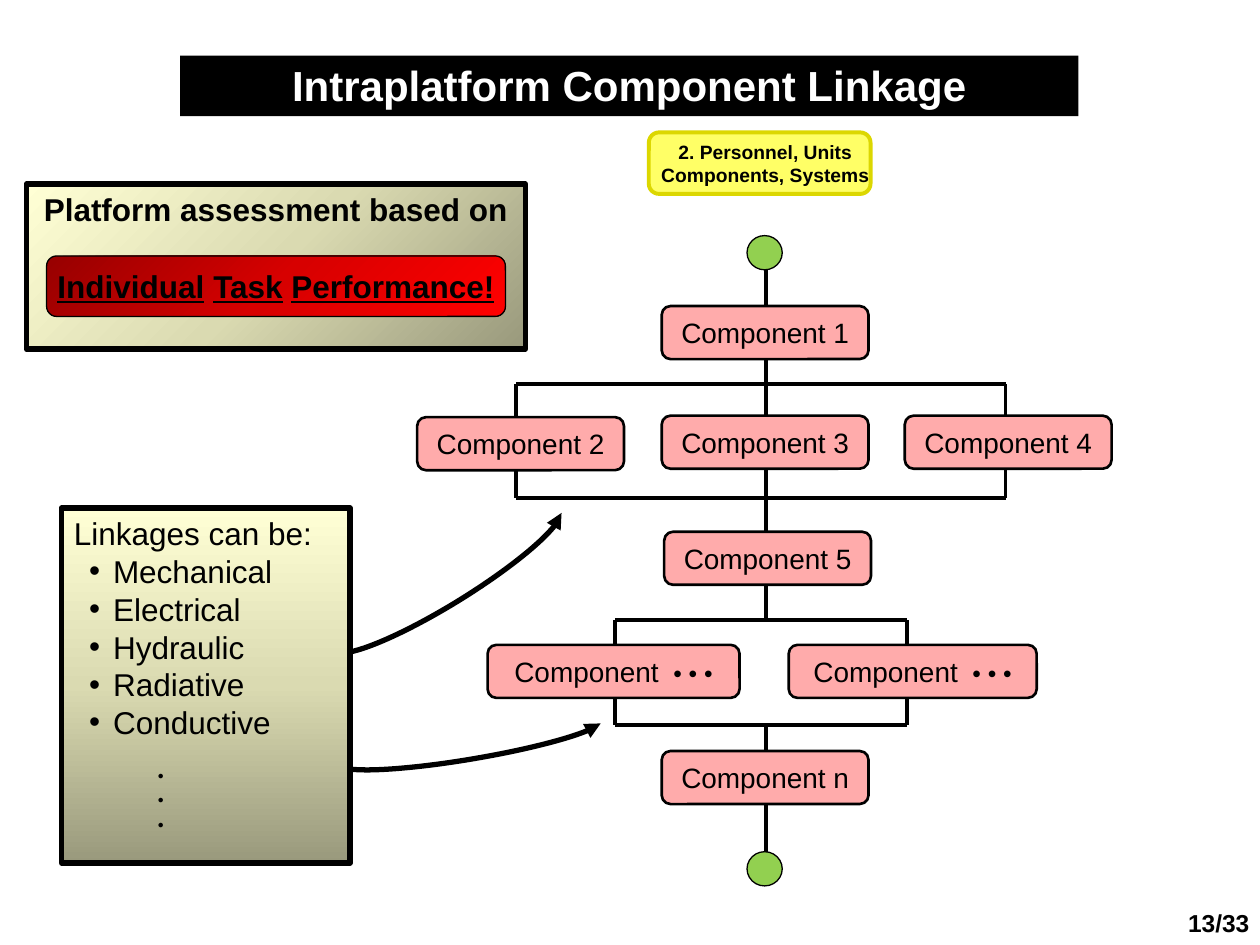
from copy import deepcopy

from lxml.etree import SubElement
from pptx import Presentation
from pptx.dml.color import RGBColor
from pptx.enum.shapes import MSO_CONNECTOR, MSO_SHAPE
from pptx.enum.text import MSO_ANCHOR, PP_ALIGN
from pptx.oxml.ns import qn
from pptx.util import Cm, Pt

KHAKI = ("99997C", "DADAB1", "FFFFD5")
RED = ("970000", "D70000", "FF0000")
PINK = "FFABAB"
GREEN = "92D050"


def color(value):
    return RGBColor.from_string(value)


class SlideBuilder:
    font = "Arial"
    ink = "000000"

    def __init__(self, presentation):
        self.slide = presentation.slides.add_slide(presentation.slide_layouts[5])

    def format_run(self, run, size, bold=False, ink=None):
        run.font.name = self.font
        run.font.size = Pt(size)
        run.font.bold = bold
        run.font.color.rgb = color(ink or self.ink)

    def title(self, text, left, top, width, height):
        shape = self.slide.shapes.title
        shape.left, shape.top, shape.width, shape.height = map(Cm, (left, top, width, height))
        shape.fill.solid()
        shape.fill.fore_color.rgb = color(self.ink)
        frame = shape.text_frame
        frame.text = text
        frame.margin_top = Cm(0.25)
        frame.vertical_anchor = MSO_ANCHOR.MIDDLE
        paragraph = frame.paragraphs[0]
        paragraph.alignment = PP_ALIGN.CENTER
        paragraph.line_spacing = 0.85
        self.format_run(paragraph.runs[0], 24, True, "FFFFFF")

    def shape(self, kind, left, top, width, height, fill=None, line="000000", weight=1.5):
        shape = self.slide.shapes.add_shape(kind, *map(Cm, (left, top, width, height)))
        shape.shadow.inherit = False
        shape.line.color.rgb = color(line)
        shape.line.width = Pt(weight)
        if fill:
            shape.fill.solid()
            shape.fill.fore_color.rgb = color(fill)
        else:
            shape.fill.background()
        return shape

    def gradient(self, shape, colors, angle):
        shape.fill.gradient()
        shape.fill.gradient_angle = angle
        stop_list = shape._element.spPr.find(qn("a:gradFill")).find(qn("a:gsLst"))
        stop_list.append(deepcopy(stop_list[0]))
        for index, stop in enumerate(shape.fill.gradient_stops):
            stop.position = index / 2
            stop.color.rgb = color(colors[index])

    def set_text(self, shape, text, size, bold=False, align=PP_ALIGN.CENTER,
                 anchor=MSO_ANCHOR.TOP, wrap=True):
        frame = shape.text_frame
        frame.word_wrap = wrap
        frame.vertical_anchor = anchor
        frame.text = text
        for paragraph in frame.paragraphs:
            paragraph.alignment = align
            for run in paragraph.runs:
                self.format_run(run, size, bold)
        return frame

    def label(self, shape, text, size, bold=False):
        frame = self.set_text(shape, text, size, bold, anchor=MSO_ANCHOR.MIDDLE, wrap=False)
        frame.margin_left = frame.margin_right = 0
        return frame

    def add_run(self, paragraph, text, size, bold=False, underline=False):
        run = paragraph.add_run()
        run.text = text
        self.format_run(run, size, bold)
        run.font.underline = underline

    def text_box(self, text, left, top, width, height, size, **style):
        box = self.slide.shapes.add_textbox(*map(Cm, (left, top, width, height)))
        return self.set_text(box, text, size, **style)

    def component(self, name, left, top, width=4.17):
        shape = self.shape(MSO_SHAPE.ROUNDED_RECTANGLE, left, top, width, 1.07, PINK)
        return self.label(shape, f"Component {name}", 16)

    def line(self, start_x, start_y, end_x, end_y):
        connector = self.slide.shapes.add_connector(
            MSO_CONNECTOR.STRAIGHT, *map(Cm, (start_x, start_y, end_x, end_y)))
        connector.line.color.rgb = color(self.ink)
        connector.line.width = Pt(2.25)
        SubElement(connector._element.spPr, qn("a:effectLst"))

    def branch(self, left, right, top, bottom):
        for x in (left, right):
            self.line(x, top, x, bottom)
        for y in (top, bottom):
            self.line(left, y, right, y)

    def curved_arrow(self, left, top, width, height, rotation):
        arc = self.shape(MSO_SHAPE.ARC, left, top, width, height, weight=3)
        arc.adjustments[0] = 108.917
        arc.adjustments[1] = 0
        arc.rotation = rotation
        SubElement(arc._element.spPr.get_or_add_ln(), qn("a:headEnd"), type="triangle")

    def bullet(self, paragraph):
        properties = paragraph._p.get_or_add_pPr()
        properties.set("marL", str(Cm(0.79)))
        properties.set("indent", str(Cm(-0.48)))
        SubElement(properties, qn("a:buFont"), typeface=self.font)
        SubElement(properties, qn("a:buChar"), char="•")


def main():
    presentation = Presentation()
    presentation.slide_width, presentation.slide_height = Cm(25.4), Cm(19.05)
    builder = SlideBuilder(presentation)
    builder.title("Intraplatform Component Linkage", 3.63, 1.12, 18.11, 1.22)
    builder.text_box("13/33", 23.7, 18.19, 1.8, 0.86, 14, bold=True,
                     align=PP_ALIGN.LEFT, wrap=False)

    assessment = builder.shape(MSO_SHAPE.RECTANGLE, 0.53, 3.71, 10.06, 3.33, weight=3)
    builder.gradient(assessment, KHAKI, 135)
    builder.set_text(assessment, "Platform assessment based on", 18, True)
    performance = builder.shape(MSO_SHAPE.ROUNDED_RECTANGLE, 0.94, 5.16, 9.25, 1.22, weight=0.75)
    builder.gradient(performance, RED, 315)
    paragraph = builder.label(performance, "", 18).paragraphs[0]
    for word in ("Individual", " ", "Task", " ", "Performance!"):
        builder.add_run(paragraph, word, 18, True, word != " ")

    category = builder.shape(MSO_SHAPE.ROUNDED_RECTANGLE, 13.08, 2.67, 4.47, 1.24,
                             "FFFF66", "DCD700", 2.25)
    frame = builder.label(category, "2. Personnel, Units\nComponents, Systems", 11, True)
    frame.margin_left = Cm(0.23)

    trunk = 15.44
    builder.line(trunk, 5.44, trunk, 12.5)
    builder.line(trunk, 14.61, trunk, 17.17)
    builder.branch(10.41, 20.27, 7.75, 10.03)
    builder.branch(12.4, 18.29, 12.5, 14.61)
    for name, left, top in (("1", 13.34, 6.17), ("2", 8.41, 8.41), ("3", 13.34, 8.38),
                            ("4", 18.24, 8.38), ("5", 13.39, 10.72), ("n", 13.34, 15.14)):
        builder.component(name, left, top)
    for left, width in ((9.83, 5.08), (15.9, 5)):
        frame = builder.component("", left, 13, width)
        builder.add_run(frame.paragraphs[0], " • • •", 14)
    for top in (4.75, 17.17):
        builder.shape(MSO_SHAPE.OVAL, 15.06, top, 0.71, 0.69, GREEN, weight=0.75)

    builder.curved_arrow(6.3, 11.2, 5.41, 0.97, 148.3)
    builder.curved_arrow(6.78, 14.61, 5.41, 0.69, 170.4)
    linkages = builder.shape(MSO_SHAPE.RECTANGLE, 1.24, 10.24, 5.82, 7.16, weight=3)
    builder.gradient(linkages, KHAKI, 90)
    kinds = ("Mechanical", "Electrical", "Hydraulic", "Radiative", "Conductive")
    frame = builder.set_text(linkages, "\n".join(("Linkages can be:", *kinds)), 18,
                             align=PP_ALIGN.LEFT)
    for paragraph in frame.paragraphs[1:]:
        builder.bullet(paragraph)
    dots = builder.text_box("●\n●\n●", 2.39, 15.37, 1.7, 2.49, 6)
    for paragraph in dots.paragraphs:
        paragraph.space_after = Pt(7)

    presentation.save("out.pptx")


if __name__ == "__main__":
    main()
